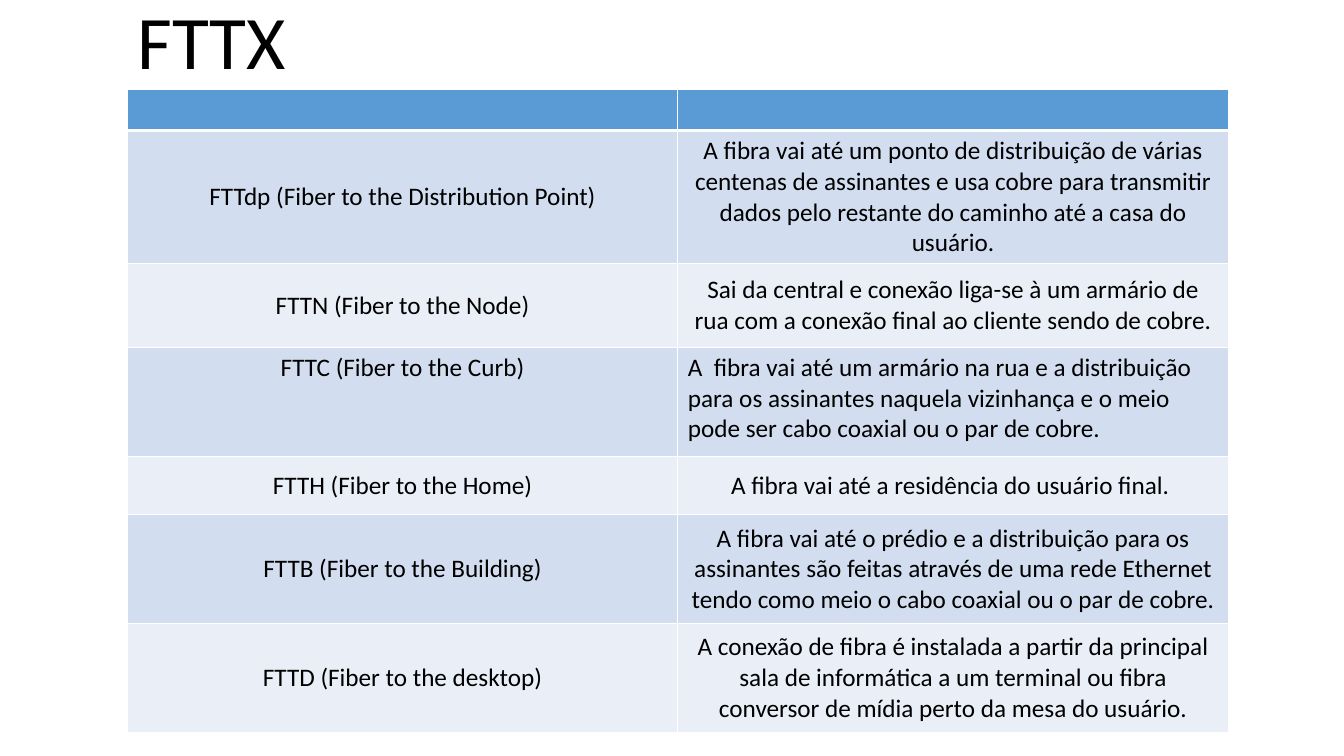
"""Builds the FTTX slide: a title above a table of fibre access types."""
from lxml import etree
from pptx import Presentation
from pptx.dml.color import RGBColor
from pptx.enum import text
from pptx.oxml import ns
from pptx.util import Pt


def paint(fill, colour):
    fill.solid()
    fill.fore_color.rgb = RGBColor.from_string(colour)


def add_border(cell, side, width):
    line = etree.SubElement(cell._tc.get_or_add_tcPr(), ns.qn(f"a:ln{side}"), w=str(Pt(width)))
    solid = etree.SubElement(line, ns.qn("a:solidFill"))
    etree.SubElement(solid, ns.qn("a:srgbClr"), val="FFFFFF")


HEADER, BANDS = "5B9BD5", ("EAEFF7", "D2DEEF")
LEFT, TABLE_TOP, COLUMN = 91, 64, 393.2
TOP_ALIGNED = 3

rows = [
    (24.5, "", ""),
    (77.8, "FTTdp (Fiber to the Distribution Point)",
     "A fibra vai até um ponto de distribuição de várias centenas de assinantes e usa cobre "
     "para transmitir dados pelo restante do caminho até a casa do usuário."),
    (59.8, "FTTN (Fiber to the Node)",
     "Sai da central e conexão liga-se à um armário de rua com a conexão final ao cliente "
     "sendo de cobre."),
    (77.8, "FTTC (Fiber to the Curb)",
     "A  fibra vai até um armário na rua e a distribuição para os assinantes naquela "
     "vizinhança e o meio pode ser cabo coaxial ou o par de cobre."),
    (41.8, "FTTH (Fiber to the Home)", "A fibra vai até a residência do usuário final. "),
    (77.8, "FTTB (Fiber to the Building)",
     "A fibra vai até o prédio e a distribuição para os assinantes são feitas através de uma "
     "rede Ethernet tendo como meio o cabo coaxial ou o par de cobre."),
    (77.8, "FTTD (Fiber to the desktop)",
     "A conexão de fibra é instalada a partir da principal sala de informática a um terminal "
     "ou fibra conversor de mídia perto da mesa do usuário."),
]

deck = Presentation()
deck.slide_width, deck.slide_height = Pt(960), Pt(540)
slide = deck.slides.add_slide(deck.slide_layouts[5])

title = slide.shapes.title
title.left, title.top, title.width, title.height = Pt(LEFT), Pt(0), Pt(665), Pt(64)
title.text_frame.text = "FTTX"
title.text_frame.vertical_anchor = text.MSO_ANCHOR.MIDDLE
heading = title.text_frame.paragraphs[0]
heading.alignment = text.PP_ALIGN.LEFT
heading.line_spacing = 0.9
heading.runs[0].font.size = Pt(54)
heading.runs[0].font.name = "Calibri"
paint(heading.runs[0].font.fill, "000000")

total = sum(height for height, *_ in rows)
fibre_types = slide.shapes.add_table(
    len(rows), 2, Pt(LEFT), Pt(TABLE_TOP), Pt(2 * COLUMN), Pt(total)).table
for column in fibre_types.columns:
    column.width = Pt(COLUMN)

for r, (height, *wording) in enumerate(rows):
    fibre_types.rows[r].height = Pt(height)
    for c, words in enumerate(wording):
        cell = fibre_types.cell(r, c)
        for side in "LRTB":
            under_header = (r, side) in ((0, "B"), (1, "T"))
            add_border(cell, side, 3 if under_header else 1)
        paint(cell.fill, BANDS[r % 2] if r else HEADER)
        if r != TOP_ALIGNED:
            cell.vertical_anchor = text.MSO_ANCHOR.MIDDLE
        cell.text_frame.text = words
        paragraph = cell.text_frame.paragraphs[0]
        if (r, c) != (TOP_ALIGNED, 1):
            paragraph.alignment = text.PP_ALIGN.CENTER
        for run in paragraph.runs:
            run.font.size = Pt(18)
            run.font.name = "Calibri"
            paint(run.font.fill, "000000")

deck.save("out.pptx")
